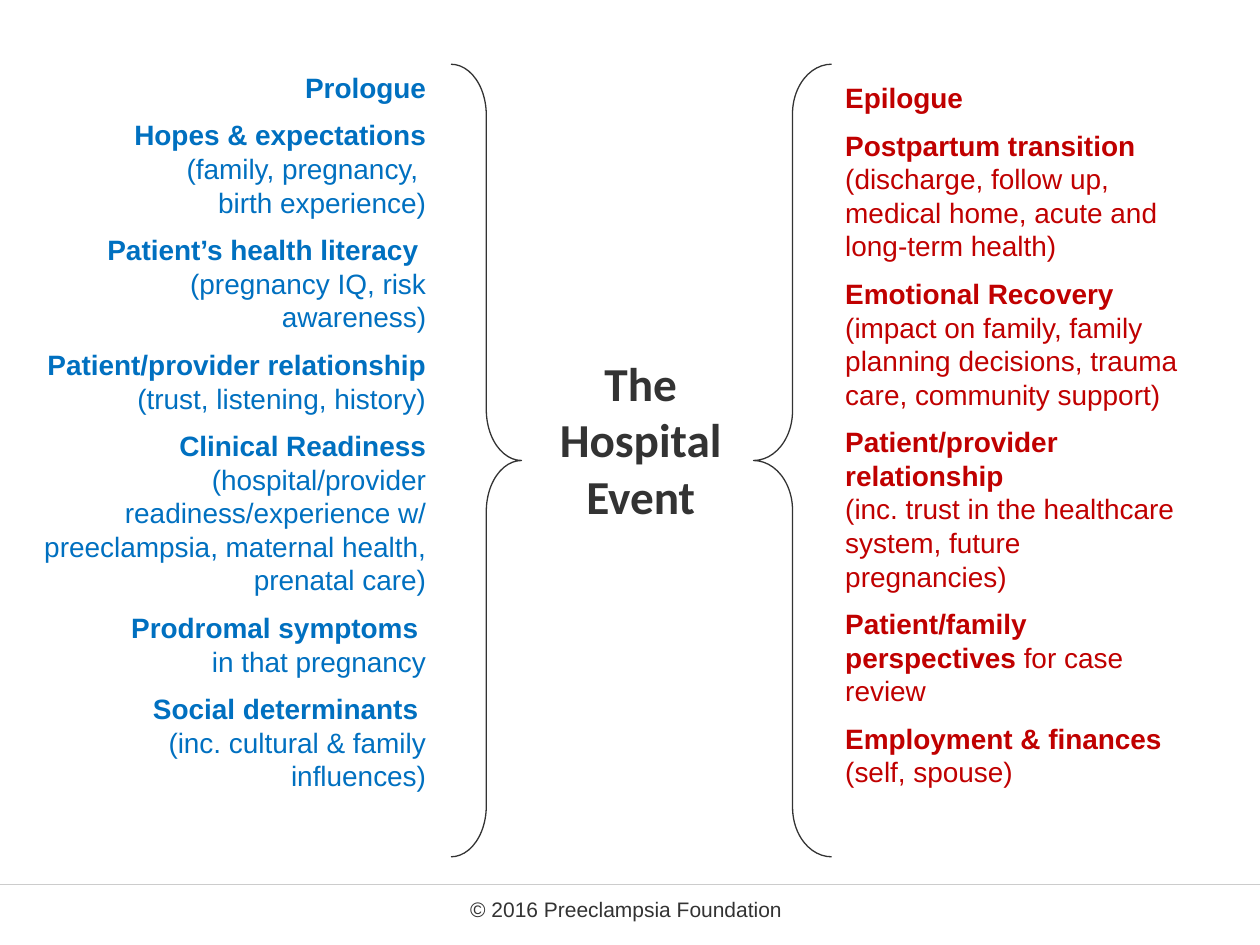
from lxml.etree import SubElement
from pptx import Presentation
from pptx.dml.color import RGBColor as RGB
from pptx.enum.shapes import MSO_CONNECTOR as Connector, MSO_SHAPE as Shape
from pptx.enum.text import MSO_ANCHOR as Anchor, PP_ALIGN as Align
from pptx.oxml.ns import qn
from pptx.util import Inches, Pt

# Each paragraph is a (bold, regular) pair.
PROLOGUE = [
    ("Prologue", ""),
    ("Hopes & expectations\n", "(family, pregnancy, \nbirth experience)"),
    ("Patient’s health literacy \n", "(pregnancy IQ, risk awareness)"),
    ("Patient/provider relationship ", "(trust, listening, history)"),
    ("Clinical Readiness\n", "(hospital/provider readiness/experience w/ "
     "preeclampsia, maternal health, prenatal care)"),
    ("Prodromal symptoms \n", "in that pregnancy"),
    ("Social determinants \n", "(inc. cultural & family influences)"),
]
EPILOGUE = [
    ("Epilogue", ""),
    ("Postpartum transition ", "(discharge, follow up, medical home, "
     "acute and long-term health)"),
    ("Emotional Recovery \n", "(impact on family, family planning decisions, "
     "trauma care, community support)"),
    ("Patient/provider relationship \n",
     "(inc. trust in the healthcare system, future pregnancies)"),
    ("Patient/family perspectives ", "for case review"),
    ("Employment & finances \n", "(self, spouse)"),
]
EVENT = [("The Hospital Event", "")]
COPYRIGHT = [("", "© 2016 Preeclampsia Foundation")]

THEME = {
    "prologue": RGB(0x00, 0x70, 0xC0), "epilogue": RGB(0xC0, 0x00, 0x00),
    "dark": RGB(0x33, 0x33, 0x33), "rule": RGB(0xCC, 0xCC, 0xCC),
    "body_font": "Arial", "event_font": "Calibri",
    "body": 16, "event": 27, "footer": 12,
}
BRACE_TOP, BRACE_HEIGHT = 0.51, 6.29
BRACES = [  # shape, left, width, curl
    (Shape.LEFT_BRACE, 5.98, 0.62, 0.634),
    (Shape.RIGHT_BRACE, 3.58, 0.56, 0.722),
]


def add_text(slide, paragraphs, box, *, color, size=THEME["body"],
             font=THEME["body_font"], align=Align.LEFT):
    tf = slide.shapes.add_textbox(*map(Inches, box)).text_frame
    tf.word_wrap = True
    tf.vertical_anchor = Anchor.TOP
    for i, pair in enumerate(paragraphs):
        p = tf.paragraphs[0] if i == 0 else tf.add_paragraph()
        p.alignment = align
        p.space_before = Pt(size / 2 if i else 0)
        for text, bold in zip(pair, (True, False)):
            for j, line in enumerate(text.split("\n")):
                if j:
                    p.add_line_break()
                if line:
                    r = p.add_run()
                    r.text = line
                    r.font.name, r.font.size, r.font.bold = font, Pt(size), bold
                    r.font.color.rgb = color
        # Line breaks take the paragraph's text size.
        for br in p._p.findall(qn("a:br")):
            SubElement(br, qn("a:rPr"), sz=str(size * 100))


def add_brace(slide, shape, left, width, curl):
    sp = slide.shapes.add_shape(
        shape, *map(Inches, (left, BRACE_TOP, width, BRACE_HEIGHT)))
    sp.adjustments[0], sp.adjustments[1] = curl, 0.5
    sp.shadow.inherit = False
    sp.fill.background()
    sp.line.color.rgb = THEME["dark"]
    sp.line.width = Pt(0.75)


def add_rule(slide, y):
    line = slide.shapes.add_connector(
        Connector.STRAIGHT, 0, Inches(y), Inches(10), Inches(y))
    line.line.color.rgb = THEME["rule"]
    line.line.width = Pt(1)
    SubElement(line._element.spPr, qn("a:effectLst"))


def main():
    prs = Presentation()
    prs.slide_width, prs.slide_height = Inches(10), Inches(7.5)
    s = prs.slides.add_slide(prs.slide_layouts[6])

    add_rule(s, 7.02)
    add_text(s, PROLOGUE, (0.24, 0.51, 3.24, 6.02),
             color=THEME["prologue"], align=Align.RIGHT)
    add_text(s, EVENT, (4.21, 2.76, 1.75, 1.46), color=THEME["dark"],
             size=THEME["event"], font=THEME["event_font"], align=Align.CENTER)
    add_text(s, EPILOGUE, (6.61, 0.59, 2.89, 5.89), color=THEME["epilogue"])
    for brace in BRACES:
        add_brace(s, *brace)
    add_text(s, COPYRIGHT, (3.58, 7.07, 2.78, 0.3), color=THEME["dark"],
             size=THEME["footer"], align=Align.CENTER)
    prs.save("out.pptx")


if __name__ == "__main__":
    main()
